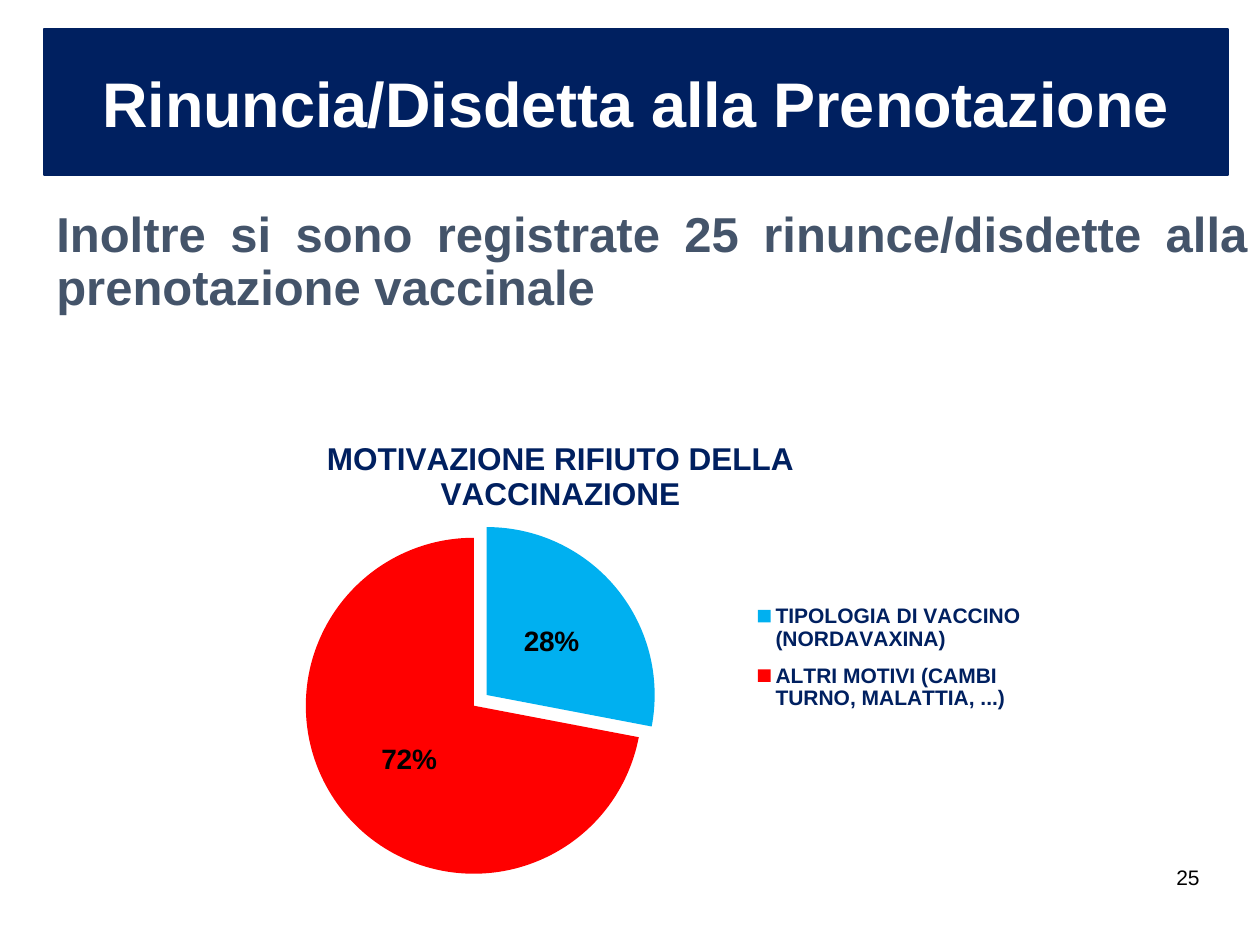
from lxml import etree
from pptx import Presentation
from pptx import util as u
from pptx.chart.data import CategoryChartData
from pptx.dml.color import RGBColor
from pptx.enum import chart as charts, text
from pptx.oxml.ns import qn

PX = 914400 / 126
NAVY = RGBColor(0x00, 0x20, 0x60)
SLATE = RGBColor(0x44, 0x54, 0x6A)
SKY = RGBColor(0x00, 0xB0, 0xF0)
RED = RGBColor(0xFF, 0x00, 0x00)
BLACK = RGBColor(0x00, 0x00, 0x00)
WHITE = RGBColor(0xFF, 0xFF, 0xFF)


def px(*lengths):
    return [u.Emu(round(length * PX)) for length in lengths]


def set_layout(element, index, **fractions):
    """Place a chart part by fractions of the chart's size."""
    for old in element.findall(qn("c:layout")):
        element.remove(old)
    layout = etree.Element(qn("c:layout"))
    manual = etree.SubElement(layout, qn("c:manualLayout"))
    if element.tag == qn("c:plotArea"):
        etree.SubElement(manual, qn("c:layoutTarget"), val="inner")
    for mode in ("xMode", "yMode"):
        etree.SubElement(manual, qn(f"c:{mode}"), val="edge")
    for name, value in fractions.items():
        etree.SubElement(manual, qn(f"c:{name}"), val=str(value))
    element.insert(index, layout)


presentation = Presentation()
presentation.slide_width, presentation.slide_height = px(1260, 945)
slide = presentation.slides.add_slide(presentation.slide_layouts[5])

# Title banner
title = slide.shapes.title
title.left, title.top, title.width, title.height = px(44, 29, 1184, 146)
title.fill.solid()
title.fill.fore_color.rgb = NAVY
title.line.color.rgb = NAVY
title.line.width = u.Pt(1)
title.text_frame.text = "Rinuncia/Disdetta alla Prenotazione"

# Introduction and page number
introduction = slide.shapes.add_textbox(*px(44, 204, 1216, 189))
introduction.text_frame.text = (
    "Inoltre si sono registrate 25 rinunce/disdette alla prenotazione vaccinale")
introduction.text_frame.paragraphs[0].line_spacing = 0.9
page_number = slide.shapes.add_textbox(*px(929, 852, 283, 50))
page_number.text_frame.text = "25"

for shape, size, color, bold, alignment, anchor in (
    (title, 36, WHITE, True, text.PP_ALIGN.CENTER, text.MSO_ANCHOR.MIDDLE),
    (introduction, 28, SLATE, True, text.PP_ALIGN.JUSTIFY, text.MSO_ANCHOR.TOP),
    (page_number, 12, BLACK, False, text.PP_ALIGN.RIGHT, text.MSO_ANCHOR.MIDDLE),
):
    shape.text_frame.word_wrap = True
    shape.text_frame.vertical_anchor = anchor
    paragraph = shape.text_frame.paragraphs[0]
    paragraph.alignment = alignment
    paragraph.font.name = "Arial"
    paragraph.font.size = u.Pt(size)
    paragraph.font.bold = bold
    paragraph.font.color.rgb = color

# Pie chart of the reasons
data = CategoryChartData()
data.categories = ["TIPOLOGIA DI VACCINO (NORDAVAXINA)",
                   "ALTRI MOTIVI (CAMBI TURNO, MALATTIA, ...)"]
data.add_series("Series 1", (28, 72))
chart = slide.shapes.add_chart(
    charts.XL_CHART_TYPE.PIE, *px(194, 413, 848, 480), data).chart
chart.font.name = "Arial"
chart.font.size = u.Pt(10)
chart.font.color.rgb = BLACK
set_layout(chart._chartSpace.chart.plotArea, 0, x=0.13, y=0.26, w=0.4, h=0.7)

chart.has_title = True
chart.chart_title.text_frame.text = "MOTIVAZIONE RIFIUTO DELLA VACCINAZIONE"
title_font = chart.chart_title.text_frame.paragraphs[0].font
title_font.name = "Arial"
title_font.size = u.Pt(18)
title_font.bold = True
title_font.color.rgb = NAVY
chart.chart_title.include_in_layout = False
set_layout(chart.chart_title._element, 1, x=0.15, y=0.04)

chart.has_legend = True
legend = chart.legend
legend.position = charts.XL_LEGEND_POSITION.RIGHT
legend.include_in_layout = False
legend.font.name = "Arial"
legend.font.size = u.Pt(12)
legend.font.bold = True
legend.font.color.rgb = NAVY
set_layout(legend._element, 1, x=0.65, y=0.37, w=0.34, h=0.28)

# Slices, the first one pulled out
plot = chart.plots[0]
plot.vary_by_categories = True
for index, color in enumerate((SKY, RED)):
    point = plot.series[0].points[index]
    point.format.fill.solid()
    point.format.fill.fore_color.rgb = color
first_slice = plot.series[0]._element.find(qn("c:dPt"))
explosion = etree.Element(qn("c:explosion"), val="10")
first_slice.find(qn("c:spPr")).addprevious(explosion)

# Percentages on the slices
plot.has_data_labels = True
labels = plot.data_labels
labels.show_percentage = True
labels.show_value = False
labels.number_format = "0%"
labels.number_format_is_linked = False
labels.position = charts.XL_LABEL_POSITION.CENTER
labels.font.name = "Arial"
labels.font.size = u.Pt(16)
labels.font.bold = True
labels.font.color.rgb = BLACK

presentation.save("out.pptx")
